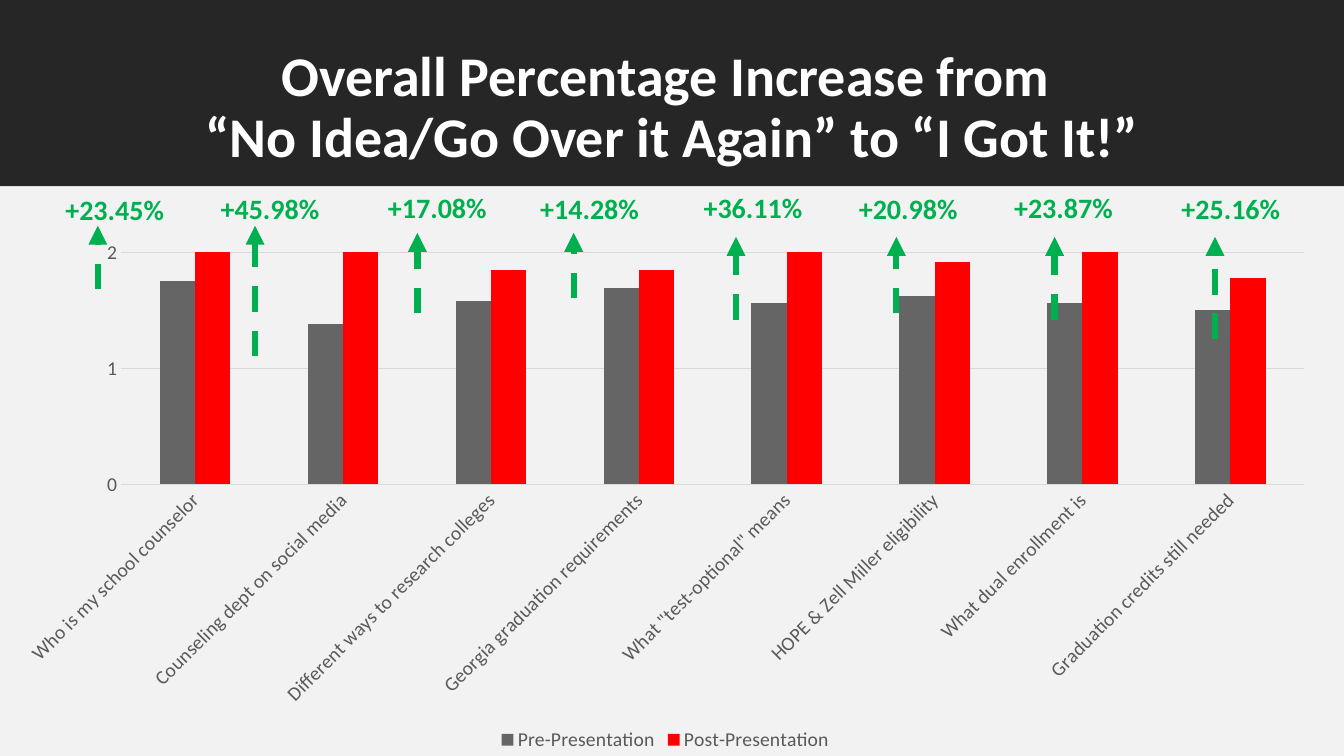
from typing import Any, NamedTuple

from lxml import etree
from pptx import Presentation, util as u
from pptx.chart import data
from pptx.dml.color import RGBColor
from pptx.enum import chart as ch, dml, shapes, text
from pptx.oxml import ns

DARK = RGBColor(0x26, 0x26, 0x26)
PALE = RGBColor(0xF2, 0xF2, 0xF2)
WHITE = RGBColor(0xFF, 0xFF, 0xFF)
GREEN = RGBColor(0x00, 0xB0, 0x50)
GRAY = RGBColor(0x65, 0x65, 0x65)
RED = RGBColor(0xFF, 0x00, 0x00)
INK = RGBColor(0x59, 0x59, 0x59)
GRID = RGBColor(0xD9, 0xD9, 0xD9)
FONT = "Calibri"
WIDE, HIGH, SPLIT = 13.33, 7.5, 1.85


class Topic(NamedTuple):
    name: str
    pre: float
    post: float
    gain: str
    left: float   # gain label
    top: float
    x: float      # arrow
    tail: float
    tip: float


TOPICS = [
    Topic("Who is my school counselor", 1.75, 2, "+23.45%", 0.55, 1.86, 0.97, 2.87, 2.24),
    Topic("Counseling dept on social media", 1.38, 2, "+45.98%", 2.09, 1.85, 2.53, 3.53, 2.24),
    Topic("Different ways to research colleges", 1.58, 1.85, "+17.08%", 3.75, 1.84, 4.14, 3.11, 2.31),
    Topic("Georgia graduation requirements", 1.69, 1.85, "+14.28%", 5.26, 1.85, 5.69, 2.96, 2.31),
    Topic('What "test-optional" means', 1.56, 2, "+36.11%", 6.88, 1.84, 7.3, 3.17, 2.35),
    Topic("HOPE & Zell Miller eligibility", 1.62, 1.92, "+20.98%", 8.42, 1.85, 8.89, 3.11, 2.35),
    Topic("What dual enrollment is", 1.56, 2, "+23.87%", 9.96, 1.84, 10.46, 3.17, 2.35),
    Topic("Graduation credits still needed", 1.5, 1.78, "+25.16%", 11.62, 1.85, 12.05, 3.36, 2.35),
]


def apply(obj: Any, **form: Any) -> None:
    """Set each named attribute on obj."""
    for key, val in form.items():
        setattr(obj, key, val)


def style(font: Any, size: float, color: RGBColor, bold: bool = False) -> None:
    apply(font, name=FONT, size=u.Pt(size), bold=bold)
    font.color.rgb = color


def rule(line: Any, color: RGBColor, width: float) -> None:
    line.color.rgb = color
    line.width = u.Pt(width)


def band(slide: Any, top: float, high: float, color: RGBColor) -> None:
    box = slide.shapes.add_shape(shapes.MSO_SHAPE.RECTANGLE, 0, u.Inches(top),
                                 u.Inches(WIDE), u.Inches(high))
    box.fill.solid()
    box.fill.fore_color.rgb = color
    box.line.fill.background()
    box.shadow.inherit = False


def head(slide: Any) -> None:
    """Fill the title and lift it above the dark band."""
    title = slide.shapes.title
    apply(title, left=0, top=u.Inches(0.43), width=u.Inches(WIDE), height=u.Inches(0.98))
    frame = title.text_frame
    apply(frame, text="Overall Percentage Increase from \v“No Idea/Go Over it Again” to “I Got It!”",
          word_wrap=True, auto_size=text.MSO_AUTO_SIZE.NONE,
          vertical_anchor=text.MSO_ANCHOR.TOP)
    par = frame.paragraphs[0]
    apply(par, alignment=text.PP_ALIGN.CENTER, line_spacing=0.9)
    for run in par.runs:
        style(run.font, 40, WHITE, True)
    slide.shapes._spTree.append(title._element)


def plot(slide: Any) -> None:
    table = data.CategoryChartData()
    table.categories = [t.name for t in TOPICS]
    table.add_series("Pre-Presentation", [t.pre for t in TOPICS])
    table.add_series("Post-Presentation", [t.post for t in TOPICS])
    chart = slide.shapes.add_chart(
        ch.XL_CHART_TYPE.COLUMN_CLUSTERED, 0, u.Inches(2.28),
        u.Inches(13.2), u.Inches(5.22), table).chart
    apply(chart, has_title=False, has_legend=True)
    style(chart.font, 14, INK)
    apply(chart.legend, position=ch.XL_LEGEND_POSITION.BOTTOM, include_in_layout=False)
    style(chart.legend.font, 14, INK)

    bars = chart.plots[0]
    apply(bars, gap_width=219, overlap=0, vary_by_categories=False)
    for item, color in zip(bars.series, (GRAY, RED)):
        item.format.fill.solid()
        item.format.fill.fore_color.rgb = color

    cat, val = chart.category_axis, chart.value_axis
    for axis in (cat, val):
        apply(axis, major_tick_mark=ch.XL_TICK_MARK.NONE,
              minor_tick_mark=ch.XL_TICK_MARK.NONE)
        style(axis.tick_labels.font, 14, INK)
    rule(cat.format.line, GRID, 0.75)
    cat._element.find(ns.qn("c:txPr")).find(ns.qn("a:bodyPr")).set("rot", "-2700000")
    apply(val, minimum_scale=0, maximum_scale=2, major_unit=1, has_major_gridlines=True)
    rule(val.major_gridlines.format.line, GRID, 0.75)
    val.format.line.fill.background()


def arrow(slide: Any, topic: Topic) -> None:
    x = u.Inches(topic.x)
    link = slide.shapes.add_connector(shapes.MSO_CONNECTOR.STRAIGHT, x,
                                      u.Inches(topic.tail), x, u.Inches(topic.tip))
    rule(link.line, GREEN, 4.5)
    link.line.dash_style = dml.MSO_LINE.DASH
    etree.SubElement(link.line._get_or_add_ln(), ns.qn("a:tailEnd"), type="triangle")
    etree.SubElement(link._element.spPr, ns.qn("a:effectLst"))


def label(slide: Any, topic: Topic) -> None:
    box = slide.shapes.add_textbox(u.Inches(topic.left), u.Inches(topic.top),
                                   u.Inches(1.36), u.Inches(0.44))
    apply(box.text_frame, text=topic.gain, word_wrap=True,
          auto_size=text.MSO_AUTO_SIZE.SHAPE_TO_FIT_TEXT)
    style(box.text_frame.paragraphs[0].runs[0].font, 20, GREEN, True)


def main() -> None:
    deck = Presentation()
    apply(deck, slide_width=u.Inches(WIDE), slide_height=u.Inches(HIGH))
    slide = deck.slides.add_slide(deck.slide_layouts.get_by_name("Title Only"))
    band(slide, 0, SPLIT, DARK)
    head(slide)
    band(slide, SPLIT, HIGH - SPLIT, PALE)
    plot(slide)
    for topic in TOPICS:
        arrow(slide, topic)
        label(slide, topic)
    deck.save("out.pptx")


if __name__ == "__main__":
    main()
